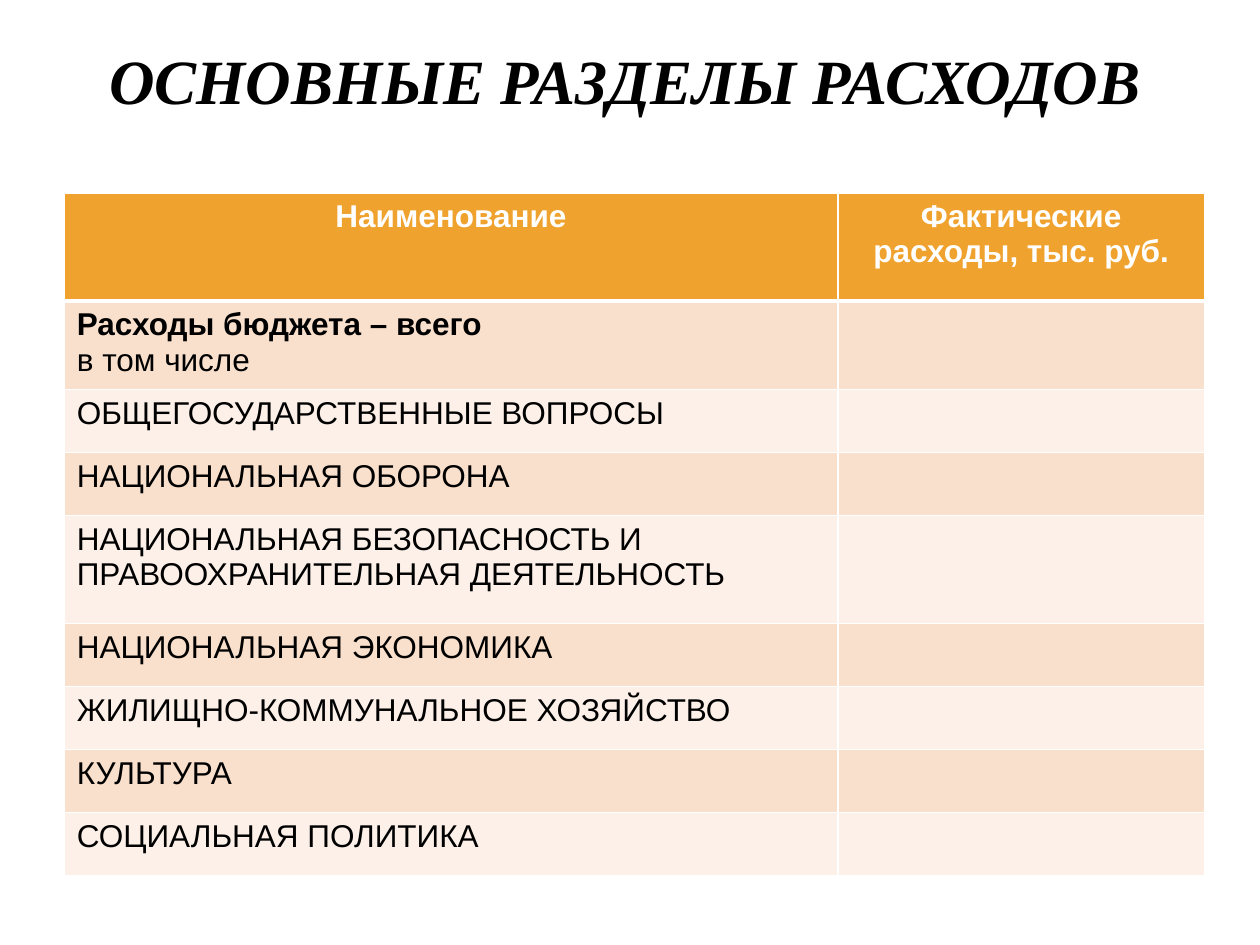
from dataclasses import dataclass
from lxml.etree import SubElement
from pptx import Presentation
from pptx.dml.color import RGBColor as RGB
from pptx.enum.text import MSO_AUTO_SIZE as Fit, PP_ALIGN as Align
from pptx.oxml.ns import qn
from pptx.util import Inches, Pt


@dataclass(frozen=True)
class Theme:
    black: str = "000000"
    white: str = "FFFFFF"
    head: str = "F0A22E"
    bands: tuple = ("F9E0CD", "FCF0E8")
    title: int = 36
    body: int = 18


theme = Theme()


def style(run, color, **form):
    for key, val in form.items():
        setattr(run.font, key, val)
    run.font.color.rgb = RGB.from_string(color)


def edge(cell, base):
    """Draw white cell borders; only the bottom width varies."""
    props = cell._tc.get_or_add_tcPr()
    for side, width in (("L", 1), ("R", 1), ("T", 1), ("B", base)):
        line = SubElement(props, qn(f"a:ln{side}"), w=str(Pt(width)))
        fill = SubElement(line, qn("a:solidFill"))
        SubElement(fill, qn("a:srgbClr"), val=theme.white)


deck = Presentation()
deck.slide_width, deck.slide_height = Inches(10), Inches(7.5)
slide = deck.slides.add_slide(deck.slide_layouts[6])

# Title
box = slide.shapes.add_textbox(Inches(0.43), Inches(0.28), Inches(9.06), Inches(0.71))
frame = box.text_frame
frame.word_wrap = True
frame.auto_size = Fit.SHAPE_TO_FIT_TEXT
para = frame.paragraphs[0]
para.alignment = Align.CENTER
run = para.add_run()
run.text = "ОСНОВНЫЕ РАЗДЕЛЫ РАСХОДОВ"
style(run, theme.black, name="Times New Roman", size=Pt(theme.title), bold=True, italic=True)

# Table content: row height, then cell texts
rows = [
    (0.86, "Наименование", "Фактические расходы, тыс. руб."),
    (0.7, "Расходы бюджета – всего\nв том числе", ""),
    (0.5, "ОБЩЕГОСУДАРСТВЕННЫЕ ВОПРОСЫ", ""),
    (0.5, "НАЦИОНАЛЬНАЯ ОБОРОНА", ""),
    (0.86, "НАЦИОНАЛЬНАЯ БЕЗОПАСНОСТЬ И ПРАВООХРАНИТЕЛЬНАЯ ДЕЯТЕЛЬНОСТЬ", ""),
    (0.5, "НАЦИОНАЛЬНАЯ ЭКОНОМИКА", ""),
    (0.5, "ЖИЛИЩНО-КОММУНАЛЬНОЕ ХОЗЯЙСТВО", ""),
    (0.5, "КУЛЬТУРА", ""),
    (0.5, "СОЦИАЛЬНАЯ ПОЛИТИКА", ""),
]
widths = (6.14, 2.91)
total = sum(row[0] for row in rows)
table = slide.shapes.add_table(
    len(rows), len(widths), Inches(0.51), Inches(1.53), Inches(sum(widths)), Inches(total)
).table
for col, width in zip(table.columns, widths):
    col.width = Inches(width)

# Header, total row and banded sections
for i, (height, *texts) in enumerate(rows):
    table.rows[i].height = Inches(height)
    head = i == 0
    for j, text in enumerate(texts):
        cell = table.cell(i, j)
        edge(cell, 3 if head else 1)
        cell.fill.solid()
        shade = theme.head if head else theme.bands[(i - 1) % 2]
        cell.fill.fore_color.rgb = RGB.from_string(shade)
        cell.text = text
        for k, para in enumerate(cell.text_frame.paragraphs):
            para.alignment = Align.CENTER if head else Align.LEFT
            for run in para.runs:
                style(run, theme.white if head else theme.black, name="Arial",
                      size=Pt(theme.body), bold=head or (i == 1 and k == 0))

deck.save("out.pptx")
